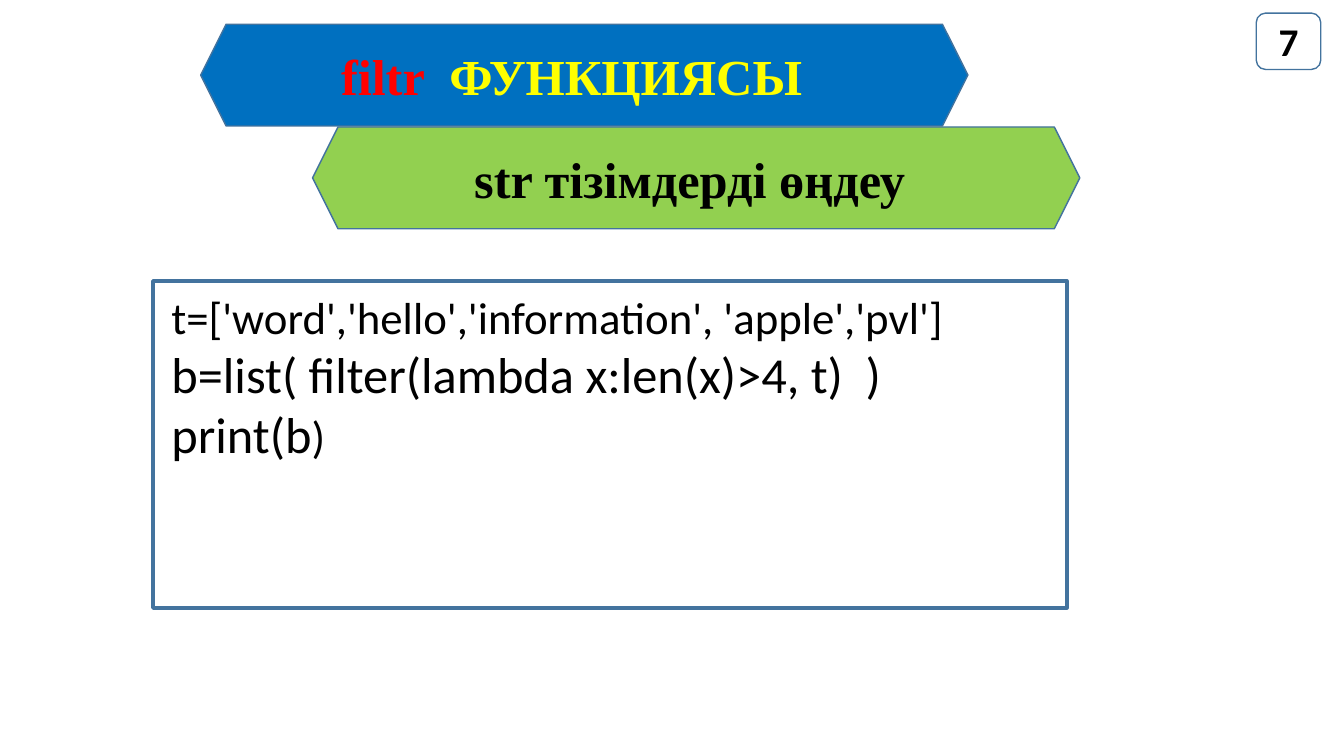
from pptx import Presentation
from pptx.dml.color import RGBColor
from pptx.enum.shapes import MSO_SHAPE
from pptx.enum.text import MSO_ANCHOR, MSO_AUTO_SIZE, PP_ALIGN
from pptx.util import Inches, Pt

OUTLINE = "43739E"
BLACK = "000000"
SERIF = "Times New Roman"
SANS = "Calibri"
BANNER_WIDTH, BANNER_HEIGHT = 7.61, 1.01


def color(hex_string):
    return RGBColor.from_string(hex_string)


def add_box(slide, kind, left, top, width, height, fill=None, line_width=1):
    shape = slide.shapes.add_shape(
        kind, Inches(left), Inches(top), Inches(width), Inches(height))
    shape.shadow.inherit = False
    if fill:
        shape.fill.solid()
        shape.fill.fore_color.rgb = color(fill)
    else:
        shape.fill.background()
    shape.line.color.rgb = color(OUTLINE)
    shape.line.width = Pt(line_width)
    return shape


def add_banner(slide, left, top, fill):
    return add_box(slide, MSO_SHAPE.HEXAGON, left, top,
                   BANNER_WIDTH, BANNER_HEIGHT, fill)


def add_run(paragraph, text, size, font_name, hex_string, bold=False):
    run = paragraph.add_run()
    run.text = text
    run.font.size = Pt(size)
    run.font.name = font_name
    run.font.bold = bold
    run.font.color.rgb = color(hex_string)


def centered_paragraph(shape):
    frame = shape.text_frame
    frame.word_wrap = True
    frame.auto_size = MSO_AUTO_SIZE.NONE
    frame.vertical_anchor = MSO_ANCHOR.MIDDLE
    paragraph = frame.paragraphs[0]
    paragraph.alignment = PP_ALIGN.CENTER
    return paragraph


def add_title(slide, banner):
    title = slide.shapes.title
    title.left, title.top = banner.left, banner.top
    title.width, title.height = banner.width, banner.height
    slide.shapes._spTree.append(title._element)
    paragraph = centered_paragraph(title)
    add_run(paragraph, "filtr  ", 36, SERIF, "FF0000", True)
    add_run(paragraph, "ФУНКЦИЯСЫ  ", 36, SERIF, "FFFF00", True)


def add_code(slide, lines):
    shape = add_box(slide, MSO_SHAPE.RECTANGLE, 1.52, 2.79, 9.06, 3.24, line_width=3)
    frame = shape.text_frame
    frame.word_wrap = True
    frame.vertical_anchor = MSO_ANCHOR.TOP
    frame.margin_left = frame.margin_top = frame.margin_right = Inches(0.08)
    frame.margin_bottom = 0
    for index, line in enumerate(lines):
        paragraph = frame.add_paragraph() if index else frame.paragraphs[0]
        paragraph.alignment = PP_ALIGN.LEFT
        paragraph._p.get_or_add_pPr().set("marL", str(Inches(0.1)))
        for text, size in line:
            add_run(paragraph, text, size, SANS, BLACK)


def main():
    presentation = Presentation()
    presentation.slide_width = Inches(13.33)
    presentation.slide_height = Inches(7.5)
    slide = presentation.slides.add_slide(presentation.slide_layouts[5])

    add_title(slide, add_banner(slide, 1.99, 0.24, "0070C0"))
    add_code(slide, [
        [("t=['word','hello','information', 'apple','pvl']", 32)],
        [("b=list( filter(lambda x:len(x)>4, t)  )", 36)],
        [("print(b", 36), (")", 32)],
    ])
    page_number = add_box(slide, MSO_SHAPE.ROUNDED_RECTANGLE, 12.46, 0.13, 0.64, 0.56)
    add_run(centered_paragraph(page_number), "7", 28, SANS, BLACK, True)
    subtitle = add_banner(slide, 3.1, 1.26, "92D050")
    add_run(centered_paragraph(subtitle), "str тізімдерді өңдеу ", 36, SERIF, BLACK, True)

    presentation.save("out.pptx")


if __name__ == "__main__":
    main()
